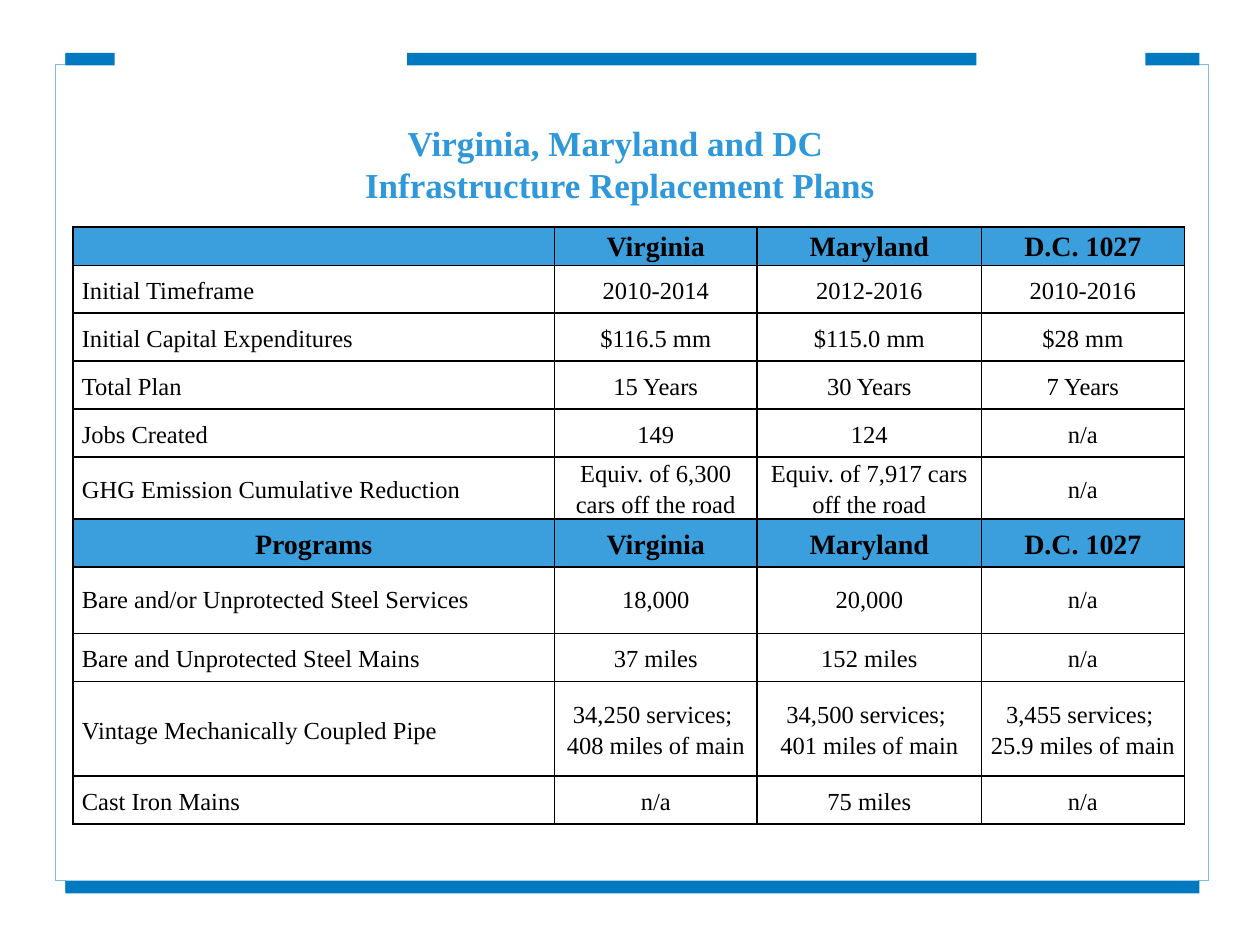
from pptx import Presentation
from pptx.dml.color import RGBColor
from pptx.enum.shapes import MSO_SHAPE
from pptx.enum.text import MSO_ANCHOR, MSO_AUTO_SIZE, PP_ALIGN
from pptx.oxml import parse_xml
from pptx.oxml.ns import nsdecls
from pptx.util import Inches, Pt

RECTANGLE, CROSS = MSO_SHAPE.RECTANGLE, MSO_SHAPE.CROSS
TOP, MIDDLE = MSO_ANCHOR.TOP, MSO_ANCHOR.MIDDLE
LEFT, CENTER = PP_ALIGN.LEFT, PP_ALIGN.CENTER
NO_AUTOFIT = MSO_AUTO_SIZE.NONE
TITLE_ONLY = 5
COLUMNS, ROWS = 100, 75  # slide grid

STATES = ["Virginia", "Maryland", "D.C. 1027"]
PLANS = [
    ["", *STATES],
    ["Initial Timeframe", "2010-2014", "2012-2016", "2010-2016"],
    ["Initial Capital Expenditures", "$116.5 mm", "$115.0 mm", "$28 mm"],
    ["Total Plan", "15 Years", "30 Years", "7 Years"],
    ["Jobs Created", "149", "124", "n/a"],
    ["GHG Emission Cumulative Reduction", "Equiv. of 6,300 cars off the road",
     "Equiv. of 7,917 cars off the road", "n/a"],
    ["Programs", *STATES],
    ["Bare and/or Unprotected Steel Services", "18,000", "20,000", "n/a"],
    ["Bare and Unprotected Steel Mains", "37 miles", "152 miles", "n/a"],
    ["Vintage Mechanically Coupled Pipe", "34,250 services; \n408 miles of main",
     "34,500 services; \n401 miles of main", "3,455 services; \n25.9 miles of main"],
    ["Cast Iron Mains", "n/a", "75 miles", "n/a"],
]
COLUMN_WIDTHS = [38.2, 16.1, 17.8, 16.1]
ROW_HEIGHT = 3.8
SPECIAL_HEIGHTS = {0: 2.4, 7: 5.3, 9: 7.5}
SINGLE_SPACED_ROW = 7


def color(hex_code):
    return RGBColor.from_string(hex_code)


def write(frame, text, size=14, bold=False, hue="000000", align=CENTER,
          spacing=None, font="Times New Roman"):
    """Write each line of the text as a paragraph."""
    for index, line in enumerate(text.split("\n")):
        para = frame.add_paragraph() if index else frame.paragraphs[0]
        para.text = line
        para.alignment = align
        if spacing:
            para.line_spacing = spacing
        for span in para.runs:
            span.font.name, span.font.size = font, Pt(size)
            span.font.bold, span.font.color.rgb = bold, color(hue)


class SlideBuilder:
    BAR, FRAME, HEADER, TITLE = "0079C1", "79BDE8", "3B9FDD", "2E98DB"

    def __init__(self, deck):
        self.column = deck.slide_width / COLUMNS
        self.row = deck.slide_height / ROWS
        self.slide = deck.slides.add_slide(deck.slide_layouts[TITLE_ONLY])

    def place(self, left, top, width, height):
        return (round(left * self.column), round(top * self.row),
                round(width * self.column), round(height * self.row))

    def shape(self, kind, area, fill=None, line=None):
        box = self.slide.shapes.add_shape(kind, *self.place(*area))
        box.shadow.inherit = False
        if fill:
            box.fill.solid()
            box.fill.fore_color.rgb = color(fill)
        else:
            box.fill.background()
        if line:
            box.line.color.rgb = color(line)
            box.line.width = Pt(0.5)
        else:
            box.line.fill.background()
        return box

    def title(self, text, area):
        box = self.slide.shapes.title
        box.left, box.top, box.width, box.height = self.place(*area)
        frame = box.text_frame
        frame.margin_left = frame.margin_right = 0
        frame.margin_top = frame.margin_bottom = 0
        frame.word_wrap, frame.auto_size = True, NO_AUTOFIT
        frame.vertical_anchor = MIDDLE
        write(frame, text, size=20, bold=True, hue=self.TITLE)

    def border(self, cell):
        properties = cell._tc.get_or_add_tcPr()
        for index, side in enumerate(("lnL", "lnR", "lnT", "lnB")):
            properties.insert(index, parse_xml(
                f'<a:{side} {nsdecls("a")} w="{Pt(1)}"><a:solidFill>'
                f'<a:srgbClr val="000000"/></a:solidFill></a:{side}>'))

    def cell(self, cell, text, header, align, anchor, spacing):
        cell.margin_left = cell.margin_right = Inches(0.07)
        cell.margin_top = cell.margin_bottom = 0
        cell.vertical_anchor = anchor
        if header:
            cell.fill.solid()
            cell.fill.fore_color.rgb = color(self.HEADER)
        else:
            cell.fill.background()
        self.border(cell)
        write(cell.text_frame, text, size=16 if header else 14, bold=header,
              align=align, spacing=spacing)

    def table(self, rows, left, top):
        heights = [SPECIAL_HEIGHTS.get(i, ROW_HEIGHT) for i in range(len(rows))]
        area = self.place(left, top, sum(COLUMN_WIDTHS), sum(heights))
        table = self.slide.shapes.add_table(len(rows), len(COLUMN_WIDTHS), *area).table
        table.first_row = table.horz_banding = False
        for column, width in zip(table.columns, COLUMN_WIDTHS):
            column.width = round(width * self.column)
        for r, (row, height) in enumerate(zip(rows, heights)):
            table.rows[r].height = round(height * self.row)
            header = row[1:] == STATES
            for c, text in enumerate(row):
                self.cell(table.cell(r, c), text, header,
                          align=CENTER if header or c else LEFT,
                          anchor=MIDDLE if r else TOP,
                          spacing=None if r == SINGLE_SPACED_ROW else 1.15)


def main():
    deck = Presentation()
    deck.slide_width, deck.slide_height = Inches(10), Inches(7.5)
    page = SlideBuilder(deck)

    # Frame with a bottom bar and a broken top bar
    frame = page.shape(CROSS, (4.4, 4.3, 91.5, 66.4), line=page.FRAME)
    frame.adjustments[0] = 0.012
    for top in (69.9, 4.2):
        page.shape(RECTANGLE, (5.2, top, 90, 1), fill=page.BAR)
    for left, width in ((9.1, 23.2), (77.5, 13.4)):
        page.shape(RECTANGLE, (left, 3.8, width, 1.8), fill="FFFFFF")

    # Title and plan table
    page.title("Virginia, Maryland and DC \nInfrastructure Replacement Plans",
               (10, 9.2, 78.4, 7.5))
    page.table(PLANS, left=5.8, top=18)

    deck.save("out.pptx")


if __name__ == "__main__":
    main()
